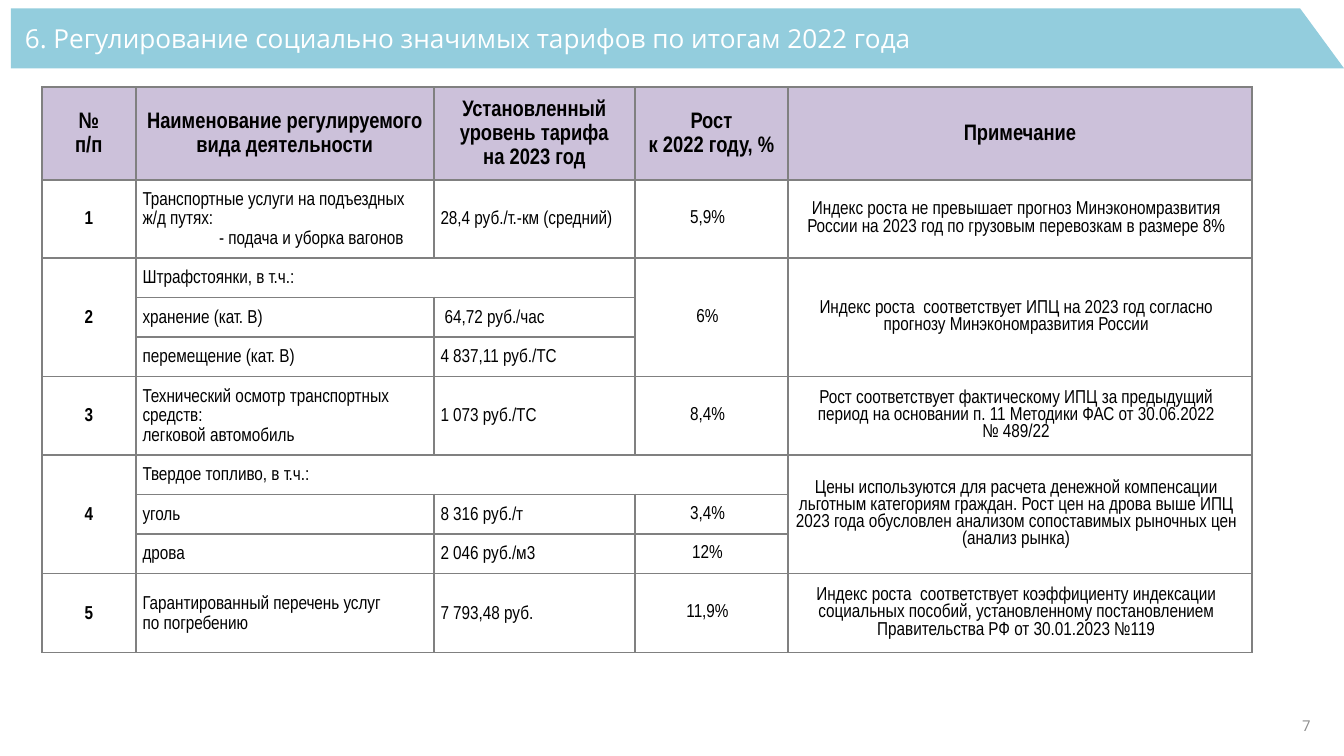
"""Builds a slide with a table of regulated tariffs for 2022–2023."""
import dataclasses

import pptx
import pptx.dml.color
import pptx.enum.text
import pptx.oxml
import pptx.oxml.ns
import pptx.util

Pt = pptx.util.Pt
RGB = pptx.dml.color.RGBColor.from_string
ALIGN = pptx.enum.text.PP_ALIGN
MIDDLE = pptx.enum.text.MSO_ANCHOR.MIDDLE


@dataclasses.dataclass(frozen=True)
class Theme:
    banner: str = "93CDDD"
    header: str = "CCC1DA"
    border: str = "808080"
    ink: str = "000000"
    light: str = "FFFFFF"
    muted: str = "8C8C8C"
    title_size: float = 14
    header_size: float = 12
    body_size: float = 10
    number_size: float = 8
    title_font: str = "Open Sans"
    table_font: str = "Arial Narrow"


theme = Theme()


def write_text(tf, text, size, font, color, bold=False, align=ALIGN.LEFT, spacing=1.0):
    tf.word_wrap = True
    for i, line in enumerate(text.split("\n")):
        p = tf.paragraphs[0] if i == 0 else tf.add_paragraph()
        p.alignment = align
        p.line_spacing = spacing
        if line.startswith("- "):
            p._p.get_or_add_pPr().set("marL", str(Pt(41)))
        r = p.add_run()
        r.text = line
        r.font.size = Pt(size)
        r.font.name = font
        r.font.bold = bold
        r.font.color.rgb = RGB(color)


def set_borders(cell, color, width):
    tcPr = cell._tc.get_or_add_tcPr()
    for side in ("lnL", "lnR", "lnT", "lnB"):
        tcPr.append(pptx.oxml.parse_xml(
            f'<a:{side} {pptx.oxml.ns.nsdecls("a")} w="{Pt(width)}">'
            f'<a:solidFill><a:srgbClr val="{color}"/></a:solidFill></a:{side}>'))


prs = pptx.Presentation()
prs.slide_width, prs.slide_height = Pt(720), Pt(405)
s = prs.slides.add_slide(prs.slide_layouts[6])

builder = s.shapes.build_freeform(Pt(5.8), Pt(4.5))
builder.add_line_segments([(Pt(696.5), Pt(4.5)), (Pt(720), Pt(36.6)), (Pt(5.8), Pt(36.6))])
banner = builder.convert_to_shape()
banner.shadow.inherit = False
banner.fill.solid()
banner.fill.fore_color.rgb = RGB(theme.banner)
banner.line.fill.background()

title = s.shapes.add_textbox(Pt(6.2), Pt(8.4), Pt(686), Pt(24.2))
write_text(title.text_frame, "6. Регулирование социально значимых тарифов по итогам 2022 года",
           size=theme.title_size, font=theme.title_font, color=theme.light)

number = s.shapes.add_textbox(Pt(684.7), Pt(378), Pt(24.5), Pt(21.6))
number.text_frame.vertical_anchor = MIDDLE
write_text(number.text_frame, "7", size=theme.number_size, font=theme.title_font,
           color=theme.muted, align=ALIGN.RIGHT)

rows = [
    ["№\nп/п", "Наименование регулируемого вида деятельности",
     "Установленный уровень тарифа\nна 2023 год", "Рост\nк 2022 году, %", "Примечание"],
    ["1", "Транспортные услуги на подъездных ж/д путях:\n- подача и уборка вагонов",
     "28,4 руб./т.-км (средний)", "5,9%",
     "Индекс роста не превышает прогноз Минэкономразвития России на 2023 год "
     "по грузовым перевозкам в размере 8%"],
    ["2", "Штрафстоянки, в т.ч.:", None, "6%",
     "Индекс роста  соответствует ИПЦ на 2023 год согласно прогнозу Минэкономразвития России"],
    [None, "хранение (кат. В)", " 64,72 руб./час", None, None],
    [None, "перемещение (кат. В)", "4 837,11 руб./ТС", None, None],
    ["3", "Технический осмотр транспортных средств:\nлегковой автомобиль", "1 073 руб./ТС", "8,4%",
     "Рост соответствует фактическому ИПЦ за предыдущий период на основании "
     "п. 11 Методики ФАС от 30.06.2022\n№ 489/22"],
    ["4", "Твердое топливо, в т.ч.:", None, None,
     "Цены используются для расчета денежной компенсации льготным категориям граждан. "
     "Рост цен на дрова выше ИПЦ 2023 года обусловлен анализом сопоставимых рыночных цен "
     "(анализ рынка)"],
    [None, "уголь", "8 316 руб./т", "3,4%", None],
    [None, "дрова", "2 046 руб./м3", "12%", None],
    ["5", "Гарантированный перечень услуг\nпо погребению", "7 793,48 руб.", "11,9%",
     "Индекс роста  соответствует коэффициенту индексации социальных пособий, "
     "установленному постановлением Правительства РФ от 30.01.2023 №119"],
]
col_widths = [50.4, 159.6, 107.8, 82, 248.6]
row_heights = [49.4, 41.8] + [21.25] * 3 + [41.8] + [21.25] * 3 + [42.2]
merges = [(2, 0, 4, 0), (2, 1, 2, 2), (2, 3, 4, 3), (2, 4, 4, 4),
          (6, 0, 8, 0), (6, 1, 6, 3), (6, 4, 8, 4)]

table = s.shapes.add_table(len(rows), len(col_widths), Pt(22.4), Pt(46.6),
                           Pt(sum(col_widths)), Pt(sum(row_heights))).table
for column, width in zip(table.columns, col_widths):
    column.width = Pt(width)
for row, height in zip(table.rows, row_heights):
    row.height = Pt(height)
for top, left, bottom, right in merges:
    table.cell(top, left).merge(table.cell(bottom, right))

for i, row in enumerate(rows):
    for j, text in enumerate(row):
        cell = table.cell(i, j)
        is_header = i == 0
        is_note = j >= 3 and not is_header
        cell.vertical_anchor = MIDDLE
        cell.margin_left = Pt(2.9 if is_note else 3.6)
        cell.margin_right = Pt(7.2 if is_note else 3.6)
        cell.margin_top = cell.margin_bottom = Pt(2.9 if is_note else 0)
        set_borders(cell, theme.border, 1)
        if is_header:
            cell.fill.solid()
            cell.fill.fore_color.rgb = RGB(theme.header)
        else:
            cell.fill.background()
        if text is not None:
            write_text(cell.text_frame, text,
                       size=theme.header_size if is_header else theme.body_size,
                       font=theme.table_font, color=theme.ink, bold=is_header or j == 0,
                       align=ALIGN.LEFT if j in (1, 2) and not is_header else ALIGN.CENTER,
                       spacing=1.0 if is_note else 1.15)

prs.save("out.pptx")
